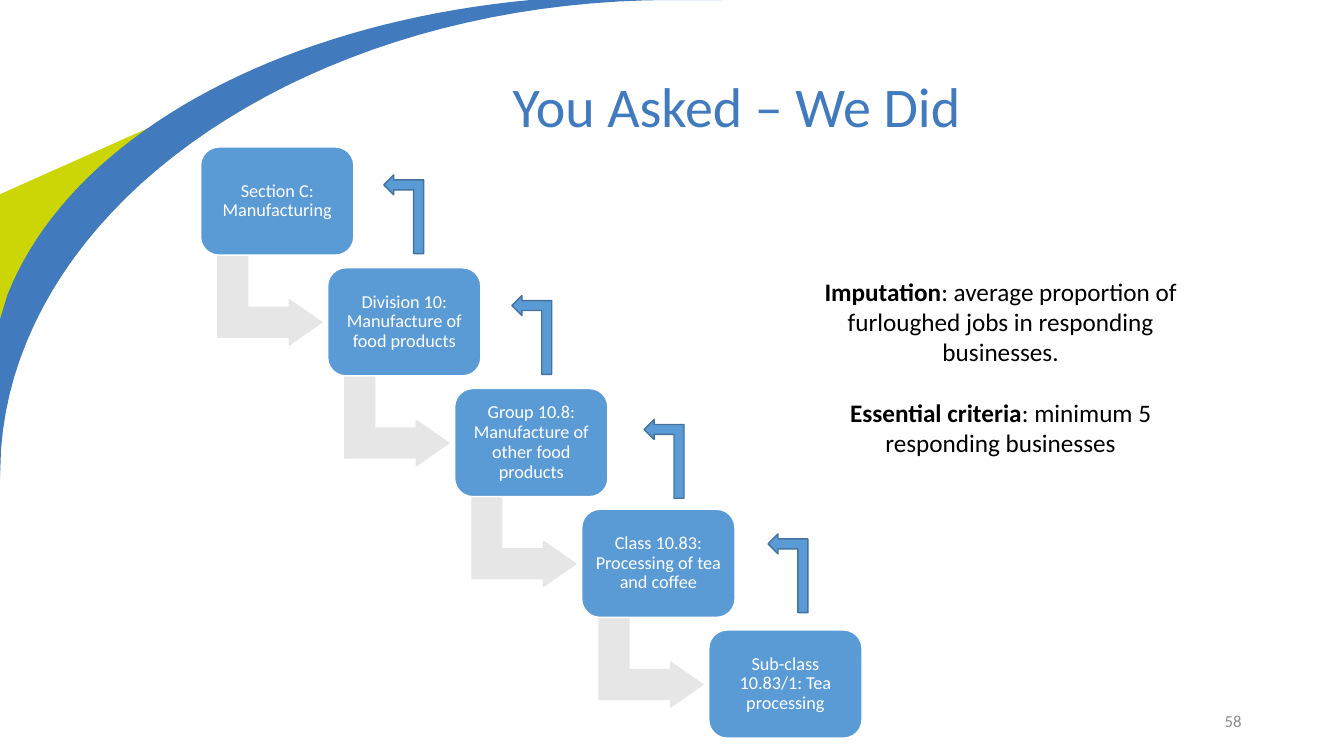
from pptx import Presentation
from pptx import util as u
from pptx.dml.color import RGBColor
from pptx.enum import shapes, text

PX = 9525  # EMU in one px, 96 px to the inch
WIDTH, HEIGHT = 1280, 720

TITLE = "You Asked – We Did"
PAGE = "58"
LEVELS = [
    "Section C: Manufacturing",
    "Division 10: Manufacture of food products",
    "Group 10.8: Manufacture of other food products",
    "Class 10.83: Processing of tea and coffee",
    "Sub-class 10.83/1: Tea processing",
]
NOTES = [
    ("Imputation", ": average proportion of furloughed jobs in responding businesses."),
    ("Essential criteria", ": minimum 5 responding businesses"),
]

BLUE, LIME, BOX, EDGE = "417ABD", "CCD607", "5B9BD5", "43739E"
GREY, PAGE_GREY, WHITE, BLACK = "E7E6E6", "8C8C8C", "FFFFFF", "000000"

# Outlines: a pair is a corner, a triple of pairs is a Bézier curve.
LIME_CORNER = [(242, 77), (250, 94), (244, 97), ((134, 158), (54, 243), (19, 342)),
               (15, 354), (0, 319), (0, 185)]
BLUE_SWOOSH = [(687, 0), (640, 0), ((298, 0), (18, 190), (1, 428)), (0, 455), (0, 304),
               (7, 281), ((66, 132), (261, 23), (505, 0)), (527, 0)]

FIRST_BOX, STEP, BOX_SIZE = (191, 140), (121, 115), (146, 103)
DOWN_OFFSET, DOWN_SIZE = (23, 96), (86, 99)
BACK_ARROWS, BACK_SIZE = [(347, 185), (469, 300), (595, 418), (713, 527)], (75, 38)


def rgb(value):
    return RGBColor.from_string(value)


def emu(*lengths):
    return [u.Emu(round(n * PX)) for n in lengths]


def paint(sp, fill, line=None):
    sp.shadow.inherit = False
    sp.fill.solid()
    sp.fill.fore_color.rgb = rgb(fill)
    if line:
        sp.line.color.rgb = rgb(line)
        sp.line.width = u.Pt(1)
    else:
        sp.line.fill.background()


def add_outline(s, outline, fill, steps=40):
    points = []
    for part in outline:
        if isinstance(part[0], tuple):
            a, (b, c, d) = points[-1], part
            for i in range(1, steps + 1):
                t = i / steps
                v = 1 - t
                points.append(tuple(
                    v**3 * a[k] + 3 * v * v * t * b[k] + 3 * v * t * t * c[k] + t**3 * d[k]
                    for k in (0, 1)))
        else:
            points.append(part)
    corners = [emu(*point) for point in points]
    builder = s.shapes.build_freeform(*corners[0])
    builder.add_line_segments(corners[1:], close=True)
    paint(builder.convert_to_shape(), fill)


def add_preset(s, kind, place, size, fill, line, rotation=0, adjust=()):
    sp = s.shapes.add_shape(kind, *emu(*place, *size))
    paint(sp, fill, line)
    sp.rotation = rotation
    for i, value in enumerate(adjust):
        sp.adjustments[i] = value
    return sp


def write(sp, paragraphs, size, color, align=text.PP_ALIGN.CENTER,
          anchor=text.MSO_ANCHOR.MIDDLE, spacing=None, inset=None, gap=0):
    """Fill a shape; each paragraph is a list of (text, bold) runs."""
    tf = sp.text_frame
    frame = {"word_wrap": True, "vertical_anchor": anchor}
    if inset is not None:
        for side in ("left", "right", "top", "bottom"):
            frame["margin_" + side] = emu(inset)[0]
    for name, value in frame.items():
        setattr(tf, name, value)
    for i, runs in enumerate(paragraphs):
        p = tf.add_paragraph() if i else tf.paragraphs[0]
        p.alignment = align
        p.line_spacing = spacing
        if i:
            p.space_before = u.Pt(gap)
        for words, bold in runs:
            r = p.add_run()
            r.text = words
            for name, value in {"name": "Calibri", "size": u.Pt(size), "bold": bold}.items():
                setattr(r.font, name, value)
            r.font.color.rgb = rgb(color)


def main():
    prs = Presentation()
    prs.slide_width, prs.slide_height = emu(WIDTH, HEIGHT)
    s = prs.slides.add_slide(prs.slide_layouts[5])

    add_outline(s, LIME_CORNER, LIME)
    add_outline(s, BLUE_SWOOSH, BLUE)

    title = s.shapes.title
    title.left, title.top, title.width, title.height = emu(256, 41, 891, 126)
    write(title, [[(TITLE, False)]], 40, BLUE, spacing=0.9)

    page = s.shapes.add_textbox(*emu(904, 667, 288, 38))
    write(page, [[(PAGE, False)]], 12, PAGE_GREY, align=text.PP_ALIGN.RIGHT)

    kinds = shapes.MSO_SHAPE
    for i, level in enumerate(LEVELS):
        x, y = (FIRST_BOX[k] + i * STEP[k] for k in (0, 1))
        if i < len(LEVELS) - 1:
            add_preset(s, kinds.BENT_UP_ARROW, (x + DOWN_OFFSET[0], y + DOWN_OFFSET[1]),
                       DOWN_SIZE, GREY, GREY, 90, (0.33, 0.25, 0.36))
        box = add_preset(s, kinds.ROUNDED_RECTANGLE, (x, y), BOX_SIZE, BOX, WHITE,
                         adjust=(0.17,))
        write(box, [[(level, False)]], 13, WHITE, spacing=0.9, inset=5)

    notes = s.shapes.add_textbox(*emu(760, 258, 386, 184))
    write(notes, [[(term, True), (rest, False)] for term, rest in NOTES], 18, BLACK,
          anchor=text.MSO_ANCHOR.TOP, gap=22)

    for place in BACK_ARROWS:
        add_preset(s, kinds.BENT_UP_ARROW, place, BACK_SIZE, BOX, EDGE, 270)

    prs.save("out.pptx")


if __name__ == "__main__":
    main()
